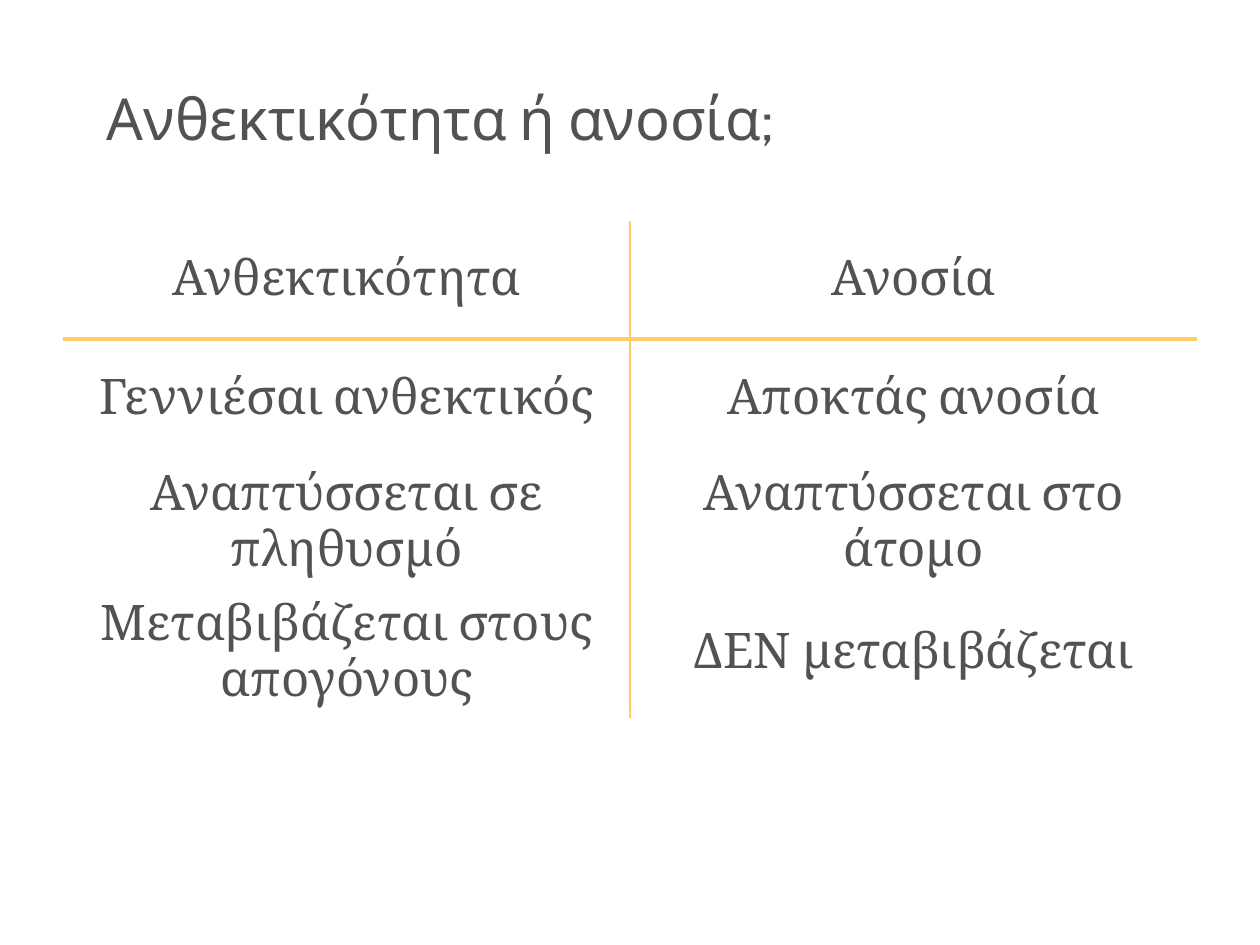
"""Build a slide comparing resistance and immunity in a two-column table."""
from lxml.etree import SubElement
from pptx import Presentation
from pptx.dml.color import RGBColor
from pptx.enum.text import MSO_ANCHOR, PP_ALIGN
from pptx.oxml.ns import qn
from pptx.util import Inches, Pt

COLORS = {"text": "525252", "rule": "FFCC66"}
TITLE = "Ανθεκτικότητα ή ανοσία;"
ROWS = [
    ("Ανθεκτικότητα", "Ανοσία"),
    ("Γεννιέσαι ανθεκτικός", "Αποκτάς ανοσία"),
    ("Αναπτύσσεται σε πληθυσμό", "Αναπτύσσεται στο άτομο"),
    ("Μεταβιβάζεται στους απογόνους", "ΔΕΝ μεταβιβάζεται"),
]
COLUMN_WIDTH, ROW_HEIGHT = 4.5, 0.94
DIVIDER, HEADER_RULE = 1.5, 3


def write_text(frame, text, *, font, size, align=PP_ALIGN.LEFT, spacing=None):
    frame.word_wrap = True
    paragraph = frame.paragraphs[0]
    paragraph.alignment = align
    paragraph.line_spacing = spacing
    span = paragraph.add_run()
    span.text = text
    span.font.name = font
    span.font.size = Pt(size)
    span.font.color.rgb = RGBColor.from_string(COLORS["text"])


def set_borders(cell, widths):
    properties = cell._tc.get_or_add_tcPr()
    for side in "LRTB":
        line = SubElement(properties, qn(f"a:ln{side}"))
        if side in widths:
            line.set("w", str(Pt(widths[side])))
            fill = SubElement(line, qn("a:solidFill"))
            SubElement(fill, qn("a:srgbClr")).set("val", COLORS["rule"])
        else:
            line.set("w", "0")
            SubElement(line, qn("a:noFill"))


def add_title(page):
    box = page.shapes.add_textbox(Inches(0.75), Inches(0.34), Inches(8.5), Inches(1.25))
    box.text_frame.vertical_anchor = MSO_ANCHOR.MIDDLE
    write_text(box.text_frame, TITLE, font="Cabin", size=33, spacing=0.9)


def add_comparison(page):
    row_count, column_count = len(ROWS), len(ROWS[0])
    table = page.shapes.add_table(
        row_count, column_count, Inches(0.5), Inches(1.75),
        Inches(COLUMN_WIDTH * column_count), Inches(ROW_HEIGHT * row_count),
    ).table
    table.first_row = table.horz_banding = False
    for row_index, row in enumerate(ROWS):
        for column_index, text in enumerate(row):
            cell = table.cell(row_index, column_index)
            cell.vertical_anchor = MSO_ANCHOR.MIDDLE
            write_text(cell.text_frame, text, font="Cambria", size=28, align=PP_ALIGN.CENTER)
            widths = {"L" if column_index else "R": DIVIDER}
            if row_index < 2:
                widths["T" if row_index else "B"] = HEADER_RULE
            set_borders(cell, widths)
            cell.fill.background()


def main():
    deck = Presentation()
    deck.slide_width, deck.slide_height = Inches(10), Inches(7.5)
    page = deck.slides.add_slide(deck.slide_layouts[6])
    add_title(page)
    add_comparison(page)
    deck.save("out.pptx")


if __name__ == "__main__":
    main()
